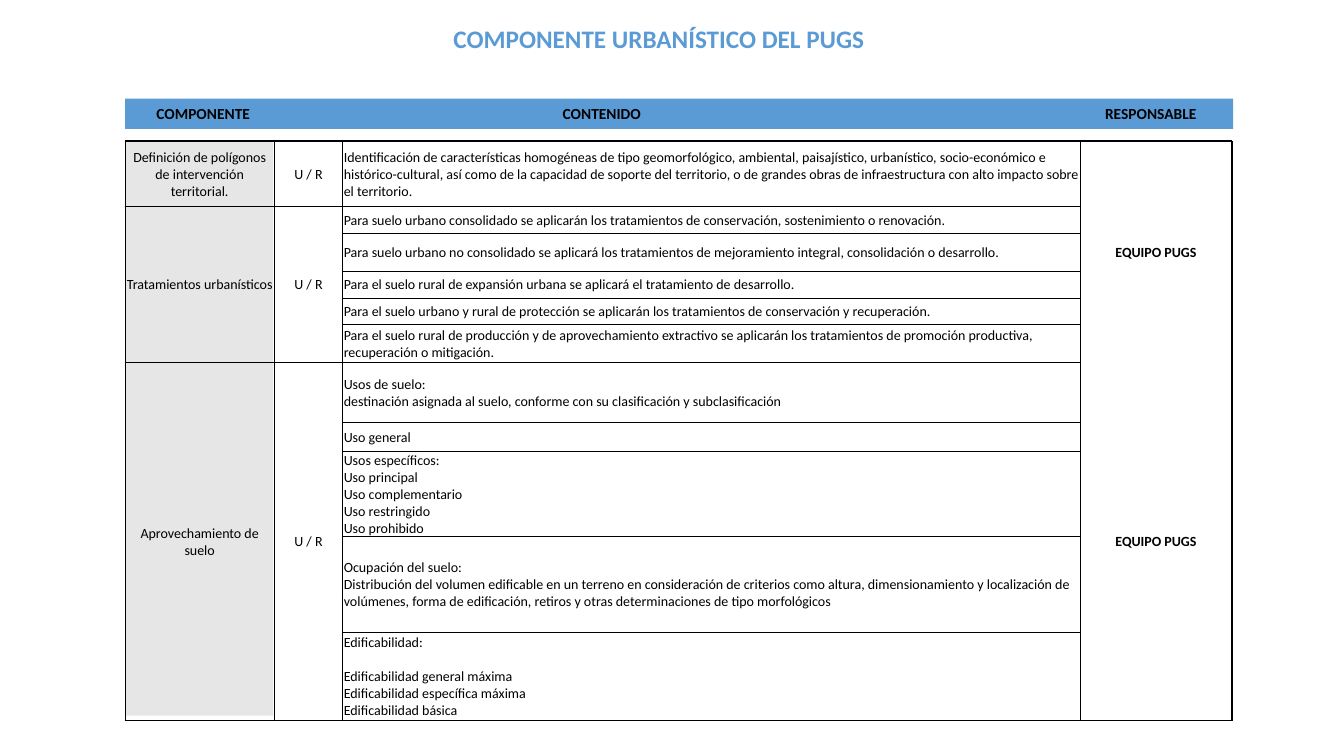
from dataclasses import dataclass

from lxml.etree import SubElement
from pptx import Presentation
from pptx.dml.color import RGBColor
from pptx.enum.shapes import MSO_CONNECTOR, MSO_SHAPE
from pptx.enum.text import MSO_ANCHOR, PP_ALIGN
from pptx.oxml.ns import qn
from pptx.util import Pt

PX = 9144
WIDTH, HEIGHT = 1333, 750


@dataclass(frozen=True)
class Theme:
    font: str = "Calibri"
    accent: str = "5B9BD5"
    gray: str = "E7E6E6"
    ink: str = "000000"
    title: int = 18
    header: int = 11
    body: int = 10
    thin: float = 0.5
    thick: float = 1


class SlideBuilder:
    def __init__(self, slide, theme):
        self.s = slide
        self.theme = theme

    def add_runs(self, p, text, size, color, bold=False, align=PP_ALIGN.LEFT):
        p.alignment = align
        for i, line in enumerate(text.split("\n")):
            if i:
                p.add_line_break()
            r = p.add_run()
            r.text = line
            r.font.name = self.theme.font
            r.font.size = Pt(size)
            r.font.bold = bold
            r.font.color.rgb = RGBColor.from_string(color)

    def rect(self, x, y, w, h, color):
        sp = self.s.shapes.add_shape(MSO_SHAPE.RECTANGLE, x * PX, y * PX, w * PX, h * PX)
        sp.shadow.inherit = False
        sp.fill.solid()
        sp.fill.fore_color.rgb = RGBColor.from_string(color)
        sp.line.fill.background()

    def text(self, x, y, w, h, text, size, color, align=PP_ALIGN.LEFT, inset=10, tabs=()):
        tf = self.s.shapes.add_textbox(x * PX, y * PX, w * PX, h * PX).text_frame
        tf.word_wrap = True
        tf.margin_left = inset * PX
        p = tf.paragraphs[0]
        self.add_runs(p, text, size, color, True, align)
        if tabs:
            tab_list = SubElement(p._p.get_or_add_pPr(), qn("a:tabLst"))
            for tab in tabs:
                SubElement(tab_list, qn("a:tab"), pos=str(tab * PX), algn="l")

    def line(self, x1, y1, x2, y2):
        c = self.s.shapes.add_connector(MSO_CONNECTOR.STRAIGHT, x1 * PX, y1 * PX, x2 * PX, y2 * PX)
        c.line.color.rgb = RGBColor.from_string(self.theme.ink)
        c.line.width = Pt(self.theme.thick)
        SubElement(c._element.spPr, qn("a:effectLst"))

    def table(self, x, y, widths, heights):
        frame = self.s.shapes.add_table(len(heights), len(widths), x * PX, y * PX,
                                        sum(widths) * PX, sum(heights) * PX)
        tbl = frame.table
        tbl.first_row = tbl.horz_banding = False
        for column, width in zip(tbl.columns, widths):
            column.width = width * PX
        for row, height in zip(tbl.rows, heights):
            row.height = height * PX
        return tbl

    def borders(self, cell, widths):
        tc_pr = cell._tc.get_or_add_tcPr()
        for side in "LRTB":
            width = widths.get(side, 0)
            ln = SubElement(tc_pr, qn(f"a:ln{side}"), w=str(int(Pt(width))))
            if width:
                fill = SubElement(ln, qn("a:solidFill"))
                SubElement(fill, qn("a:srgbClr"), val=self.theme.ink)
            else:
                SubElement(ln, qn("a:noFill"))

    def block(self, tbl, row, col, span, text, bold=False, align=PP_ALIGN.CENTER,
              sides="LRTB", right=None):
        t = self.theme
        last = row + span - 1
        for i in range(row, row + span):
            cell = tbl.cell(i, col)
            widths = {side: t.thin for side in sides}
            widths["R"] = right or t.thin
            if i > row:
                widths.pop("T", None)
            if row < i < last:
                widths.pop("B", None)
            self.borders(cell, widths)
            cell.fill.background()
            cell.margin_left = cell.margin_right = cell.margin_top = PX
            cell.margin_bottom = 0
        cell = tbl.cell(row, col)
        if span > 1:
            cell.merge(tbl.cell(last, col))
        cell.vertical_anchor = MSO_ANCHOR.MIDDLE
        tf = cell.text_frame
        for i, part in enumerate(text.split("\n\n")):
            p = tf.add_paragraph() if i else tf.paragraphs[0]
            p.space_before = Pt(12 if i else 0)
            self.add_runs(p, part, t.body, t.ink, bold, align)


COMPONENTS = [
    ("Definición de polígonos de intervención territorial.", [
        (65, "Identificación de características homogéneas de tipo geomorfológico, ambiental, paisajístico, urbanístico, socio-económico e histórico-cultural, así como de la capacidad de soporte del territorio, o de grandes obras de infraestructura con alto impacto sobre el territorio."),
    ]),
    ("Tratamientos urbanísticos", [
        (26, "Para suelo urbano consolidado se aplicarán los tratamientos de conservación, sostenimiento o renovación."),
        (38, "Para suelo urbano no consolidado se aplicará los tratamientos de mejoramiento integral, consolidación o desarrollo."),
        (27, "Para el suelo rural de expansión urbana se aplicará el tratamiento de desarrollo."),
        (26, "Para el suelo urbano y rural de protección se aplicarán los tratamientos de conservación y recuperación."),
        (38, "Para el suelo rural de producción y de aprovechamiento extractivo se aplicarán los tratamientos de promoción productiva, recuperación o mitigación."),
    ]),
    ("Aprovechamiento de suelo", [
        (59, "Usos de suelo: \ndestinación asignada al suelo, conforme con su clasificación y subclasificación"),
        (29, "Uso general"),
        (81, "Usos específicos:\nUso principal\nUso complementario\nUso restringido\nUso prohibido"),
        (95, "Ocupación del suelo:\nDistribución del volumen edificable en un terreno en consideración de criterios como altura, dimensionamiento y localización de volúmenes, forma de edificación, retiros y otras determinaciones de tipo morfológicos"),
        (87, "Edificabilidad:\n\nEdificabilidad general máxima\nEdificabilidad específica máxima\nEdificabilidad básica"),
    ]),
]
RESPONSIBLES = [(0, 6, "LR"), (6, 5, "LRB")]
COLUMNS = [148, 68, 731, 151]
LEFT, TOP = 124, 140


def main():
    prs = Presentation()
    prs.slide_width, prs.slide_height = WIDTH * PX, HEIGHT * PX
    theme = Theme()
    b = SlideBuilder(prs.slides.add_slide(prs.slide_layouts[6]), theme)

    b.rect(LEFT, TOP, 147, 570, theme.gray)
    b.rect(LEFT, 98, 1099, 30, theme.accent)
    b.text(154, 18, 999, 40, "COMPONENTE URBANÍSTICO DEL PUGS", theme.title, theme.accent,
           PP_ALIGN.CENTER)
    b.text(LEFT, 98, 1098, 29, "COMPONENTE\tCONTENIDO\tRESPONSABLE", theme.header, theme.ink,
           inset=31, tabs=(403, 941))

    heights = [height for _, contents in COMPONENTS for height, _ in contents]
    tbl = b.table(LEFT, TOP, COLUMNS, heights)
    row = 0
    for name, contents in COMPONENTS:
        b.block(tbl, row, 0, len(contents), name)
        b.block(tbl, row, 1, len(contents), "U / R")
        for i, (_, content) in enumerate(contents, row):
            b.block(tbl, i, 2, 1, content, align=PP_ALIGN.LEFT)
        row += len(contents)
    for start, span, sides in RESPONSIBLES:
        b.block(tbl, start, 3, span, "EQUIPO PUGS", True, sides=sides, right=theme.thick)
    b.line(LEFT, TOP, LEFT + sum(COLUMNS), TOP)

    prs.save("out.pptx")


if __name__ == "__main__":
    main()
